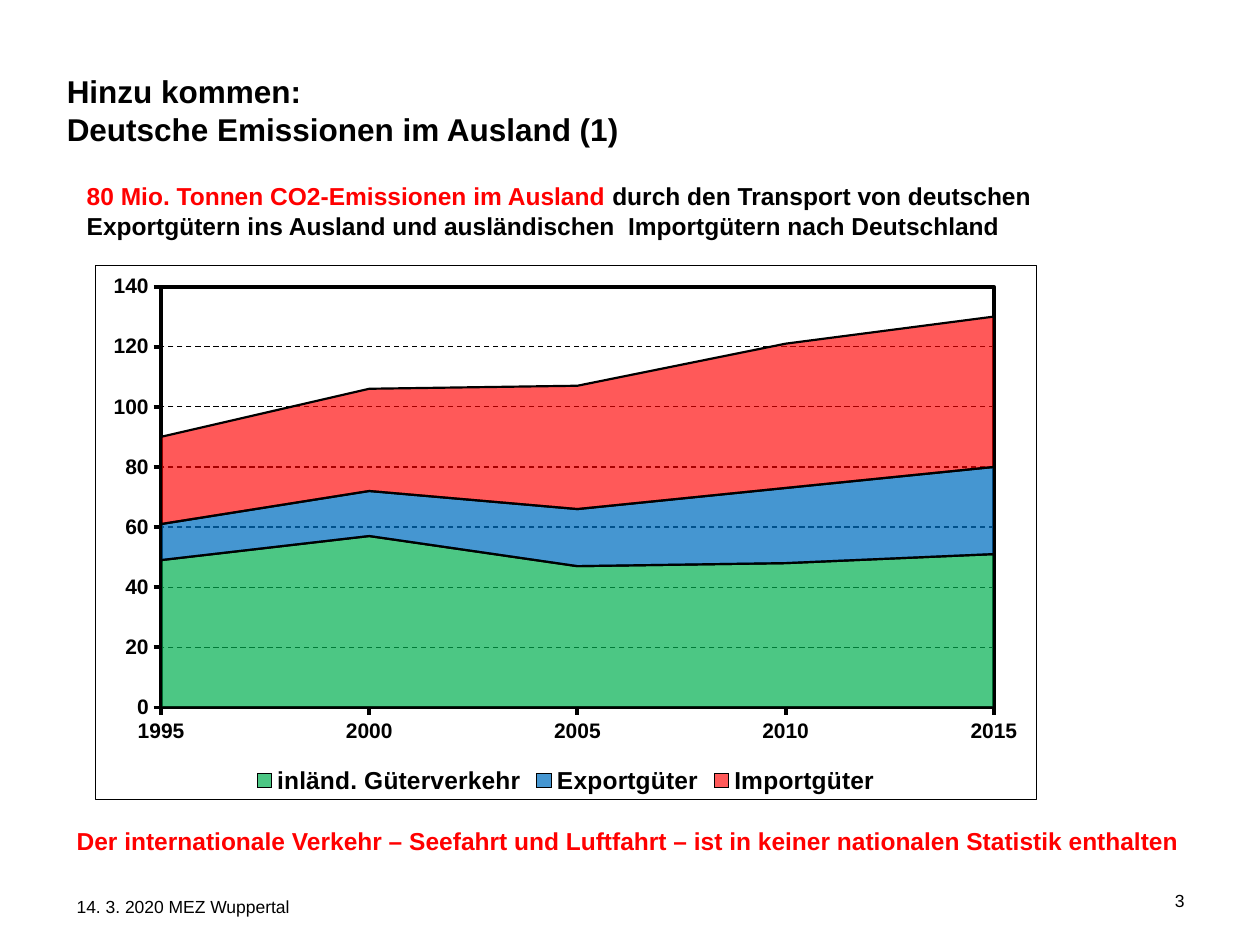
from lxml import etree
from pptx import Presentation
from pptx.chart.data import CategoryChartData
from pptx.dml.color import RGBColor
from pptx.enum.chart import XL_CHART_TYPE, XL_LEGEND_POSITION, XL_TICK_MARK
from pptx.enum.dml import MSO_LINE
from pptx.enum.text import MSO_ANCHOR, MSO_AUTO_SIZE, PP_ALIGN
from pptx.oxml import parse_xml
from pptx.oxml.ns import nsdecls, qn
from pptx.util import Inches, Pt

AREA = XL_CHART_TYPE.AREA_STACKED
BOTTOM = XL_LEGEND_POSITION.BOTTOM
OUT, NONE = XL_TICK_MARK.OUTSIDE, XL_TICK_MARK.NONE
DASH = MSO_LINE.DASH
TOP, MIDDLE = MSO_ANCHOR.TOP, MSO_ANCHOR.MIDDLE
LEFT, RIGHT = PP_ALIGN.LEFT, PP_ALIGN.RIGHT
FIXED = MSO_AUTO_SIZE.NONE

HEX = {"black": "000000", "red": "FF0000", "green": "00B050", "blue": "0070C0"}
YEARS = ["1995", "2000", "2005", "2010", "2015"]
# name, values, colour, opacity in percent
SERIES = [
    ("inländ. Güterverkehr", [49, 57, 47, 48, 51], "green", 70),
    ("Exportgüter", [12, 15, 19, 25, 29], "blue", 73),
    ("Importgüter", [29, 34, 41, 48, 50], "red", 65),
]


def style(font, size, color="black", bold=True):
    for key, value in {"name": "Arial", "size": Pt(size), "bold": bold}.items():
        setattr(font, key, value)
    font.color.rgb = RGBColor.from_string(HEX[color])


def draw(line, width, dash=None):
    line.color.rgb = RGBColor.from_string(HEX["black"])
    line.width = Pt(width)
    if dash:
        line.dash_style = dash


def write(shape, box, paras, size, bold=True, align=LEFT, anchor=TOP, wrap=True):
    """Place the shape and fill it with paragraphs of (text, colour) runs."""
    for key, value in zip(("left", "top", "width", "height"), box):
        setattr(shape, key, Inches(value))
    frame = shape.text_frame
    form = {"word_wrap": wrap, "auto_size": FIXED, "vertical_anchor": anchor}
    for key, value in form.items():
        setattr(frame, key, value)
    for i, runs in enumerate(paras):
        para = frame.add_paragraph() if i else frame.paragraphs[0]
        para.alignment = align
        for text, color in runs:
            run = para.add_run()
            run.text = text
            style(run.font, size, color, bold)


def add_text(slide, box, *args, **form):
    write(slide.shapes.add_textbox(0, 0, 0, 0), box, *args, **form)


def frame_xml(width):
    """Outline without fill, for the plot or the whole chart."""
    return parse_xml(
        f'<c:spPr {nsdecls("c", "a")}><a:noFill/><a:ln w="{Pt(width)}"><a:solidFill>'
        f'<a:srgbClr val="{HEX["black"]}"/></a:solidFill></a:ln></c:spPr>')


def set_plot(chart, x, y, w, h):
    """Fix the inner plot area, as shares of the chart, and frame it."""
    area = chart.plots[0]._element.getparent()
    for old in area.findall(qn("c:layout")):
        area.remove(old)
    marks = "".join(f'<c:{key} val="{value}"/>' for key, value in (
        ("layoutTarget", "inner"), ("xMode", "edge"), ("yMode", "edge"),
        ("x", x), ("y", y), ("w", w), ("h", h)))
    area.insert(0, parse_xml(
        f'<c:layout {nsdecls("c")}><c:manualLayout>{marks}</c:manualLayout></c:layout>'))
    area.append(frame_xml(2.25))
    area.find(".//" + qn("c:crossBetween")).set("val", "midCat")


def add_areas(slide, box):
    data = CategoryChartData(number_format="0")
    data.categories = YEARS
    for name, values, _, _ in SERIES:
        data.add_series(name, values)
    chart = slide.shapes.add_chart(AREA, *map(Inches, box), data).chart
    chart.has_title = False
    style(chart.font, 12)

    for axis in (chart.category_axis, chart.value_axis):
        axis.major_tick_mark, axis.minor_tick_mark = OUT, NONE
        draw(axis.format.line, 2.25)
        style(axis.tick_labels.font, 12)
    chart.category_axis.has_major_gridlines = False
    scale = chart.value_axis
    scale.minimum_scale, scale.maximum_scale, scale.major_unit = 0, 140, 20
    scale.has_major_gridlines = True
    draw(scale.major_gridlines.format.line, 0.75, DASH)

    chart.plots[0].vary_by_categories = False
    for series, (_, _, color, alpha) in zip(chart.plots[0].series, SERIES):
        fill = series.format.fill
        fill.solid()
        fill.fore_color.rgb = RGBColor.from_string(HEX[color])
        tint = series._element.find(".//" + qn("a:srgbClr"))
        etree.SubElement(tint, qn("a:alpha")).set("val", str(alpha * 1000))
        draw(series.format.line, 1.25)

    chart.has_legend = True
    chart.legend.position = BOTTOM
    chart.legend.include_in_layout = False
    style(chart.legend.font, 14)
    set_plot(chart, 0.07, 0.04, 0.885, 0.788)
    chart._chartSpace.find(qn("c:chart")).addnext(frame_xml(0.75))


def main():
    prs = Presentation()
    prs.slide_width, prs.slide_height = Inches(10), Inches(7.5)
    slide = prs.slides.add_slide(prs.slide_layouts[5])
    write(slide.shapes.title, (0.43, 0.52, 4.62, 0.71),
          [[("Hinzu kommen:", "black")],
           [("Deutsche Emissionen im Ausland (1)", "black")]], 18, wrap=False)
    add_text(slide, (0.59, 1.39, 7.87, 0.57),
             [[("80 Mio. Tonnen CO2-Emissionen im Ausland ", "red"),
               ("durch den Transport von deutschen Exportgütern ins Ausland "
                "und ausländischen  Importgütern nach Deutschland", "black")]], 14)
    add_areas(slide, (0.75, 2.1, 7.48, 4.25))
    add_text(slide, (0.51, 6.51, 9.06, 0.34),
             [[("Der internationale Verkehr – Seefahrt und Luftfahrt – ist in "
                "keiner nationalen Statistik enthalten", "red")]], 14)
    add_text(slide, (0.51, 7.06, 7.17, 0.27),
             [[("14. 3. 2020 MEZ Wuppertal", "black")]], 10, bold=False)
    add_text(slide, (7.17, 6.95, 2.33, 0.4), [[("3", "black")]], 10,
             bold=False, align=RIGHT, anchor=MIDDLE)
    prs.save("out.pptx")


if __name__ == "__main__":
    main()
